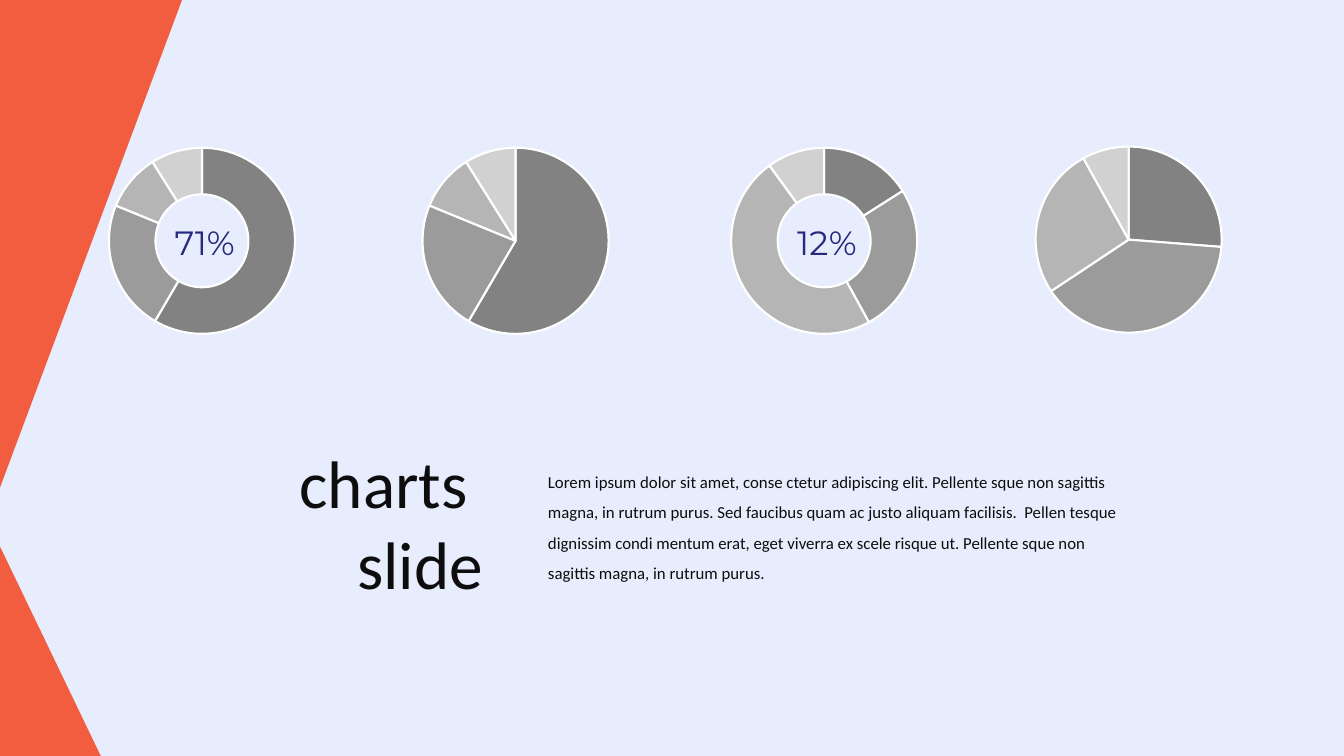
"""Build a slide with two doughnuts and two pies above a title and a paragraph."""
from typing import NamedTuple

from pptx import Presentation
from pptx import util as u
from pptx.chart.data import CategoryChartData
from pptx.dml.color import RGBColor
from pptx.enum import chart as charts, shapes, text
from pptx.oxml import parse_xml
from pptx.oxml.ns import nsdecls

COLOURS = {
    "background": "E7EDFD",
    "accent": "F25D3F",
    "ink": "0D0D0D",
    "label": "262A7C",
    "border": "FFFFFF",
    "chart_text": "000000",
}
SLICE_GREYS = ["828282", "9B9B9B", "B5B5B5", "D1D1D1"]
CHART_HEIGHT = 5.38
PLOT_DIAMETER = 4.69
BODY = (
    "Lorem ipsum dolor sit amet, conse ctetur adipiscing elit. Pellente sque non "
    "sagittis magna, in rutrum purus. Sed faucibus quam ac justo aliquam facilisis.  "
    "Pellen tesque dignissim condi mentum erat, eget viverra ex scele risque ut. "
    "Pellente sque non sagittis magna, in rutrum purus."
)


class Triangle(NamedTuple):
    top: float
    width: float
    height: float
    flipped: bool


class Ring(NamedTuple):
    left: float
    top: float
    width: float
    values: tuple[int, ...]
    label: str = ""


TRIANGLES = [Triangle(13.77, 2.54, 5.28, False), Triangle(-0.03, 4.6, 12.32, True)]
RINGS = [
    Ring(1.57, 3.38, 7.04, (59, 23, 10, 9), "71%"),
    Ring(9.42, 3.38, 7.14, (59, 23, 10, 9)),
    Ring(17.25, 3.38, 7.04, (16, 26, 48, 10), "12%"),
    Ring(24.87, 3.35, 7.14, (26, 39, 26, 8)),
]


def colour(name: str) -> RGBColor:
    return RGBColor.from_string(COLOURS[name])


def add_triangle(page, triangle: Triangle) -> None:
    shape = page.shapes.add_shape(
        shapes.MSO_SHAPE.RIGHT_TRIANGLE, 0, u.Cm(triangle.top),
        u.Cm(triangle.width), u.Cm(triangle.height))
    shape.shadow.inherit = False
    shape.fill.solid()
    shape.fill.fore_color.rgb = colour("accent")
    shape.line.fill.background()
    if triangle.flipped:
        shape.element.spPr.xfrm.set("flipV", "1")


def add_text(page, lines: list[str], *, at: tuple[float, ...], size: float,
             ink: str = "ink", font: str = "Calibri",
             align=text.PP_ALIGN.LEFT, spacing: float = 1.0) -> None:
    box = page.shapes.add_textbox(*map(u.Cm, at))
    frame = box.text_frame
    frame.word_wrap = True
    frame.auto_size = text.MSO_AUTO_SIZE.SHAPE_TO_FIT_TEXT
    for index, line in enumerate(lines):
        para = frame.add_paragraph() if index else frame.paragraphs[0]
        para.alignment = align
        para.line_spacing = spacing
        span = para.add_run()
        span.text = line
        span.font.size = u.Pt(size)
        span.font.name = font
        span.font.color.rgb = colour(ink)


def set_plot_area(chart, ring: Ring) -> None:
    width, height = PLOT_DIAMETER / ring.width, PLOT_DIAMETER / CHART_HEIGHT
    layout = parse_xml(
        f'<c:layout {nsdecls("c")}><c:manualLayout><c:layoutTarget val="inner"/>'
        '<c:xMode val="edge"/><c:yMode val="edge"/>'
        f'<c:x val="{(1 - width) / 2:.3f}"/><c:y val="{(1 - height) / 2:.3f}"/>'
        f'<c:w val="{width:.3f}"/><c:h val="{height:.3f}"/>'
        '</c:manualLayout></c:layout>')
    area = chart.element.chart.plotArea
    for old in area.xpath("c:layout"):
        area.remove(old)
    area.insert(0, layout)


def add_ring(page, ring: Ring) -> None:
    data = CategoryChartData()
    data.categories = ["1", "2", "3", "4"]
    data.add_series("Series 1", ring.values)
    kind = charts.XL_CHART_TYPE.DOUGHNUT if ring.label else charts.XL_CHART_TYPE.PIE
    chart = page.shapes.add_chart(
        kind, u.Cm(ring.left), u.Cm(ring.top), u.Cm(ring.width),
        u.Cm(CHART_HEIGHT), data).chart
    chart.has_legend = False
    chart.has_title = False
    chart.font.name = "Calibri"
    chart.font.size = u.Pt(10)
    chart.font.color.rgb = colour("chart_text")
    plot = chart.plots[0]
    plot.vary_by_categories = True
    plot.has_data_labels = False
    for hole in chart.element.xpath(".//c:holeSize"):
        hole.set("val", "75")
    for index, grey in enumerate(SLICE_GREYS):
        form = plot.series[0].points[index].format
        form.fill.solid()
        form.fill.fore_color.rgb = RGBColor.from_string(grey)
        form.line.color.rgb = colour("border")
        form.line.width = u.Pt(1.5)
    set_plot_area(chart, ring)


def main() -> None:
    deck = Presentation()
    deck.slide_width, deck.slide_height = u.Cm(33.87), u.Cm(19.05)
    page = deck.slides.add_slide(deck.slide_layouts[6])
    page.background.fill.solid()
    page.background.fill.fore_color.rgb = colour("background")
    for triangle in TRIANGLES:
        add_triangle(page, triangle)
    add_text(page, ["charts ", "slide"], at=(5.38, 11, 7.04, 4.37), size=48,
             align=text.PP_ALIGN.RIGHT)
    add_text(page, [BODY], at=(13.56, 11.51, 14.91, 3.33), size=12, spacing=1.5)
    for ring in RINGS:
        add_ring(page, ring)
        if ring.label:
            add_text(page, [ring.label], at=(ring.left + 2.27, 5.46, 2.64, 1.27),
                     size=24, ink="label", font="Montserrat",
                     align=text.PP_ALIGN.CENTER)
    deck.save("out.pptx")


if __name__ == "__main__":
    main()
